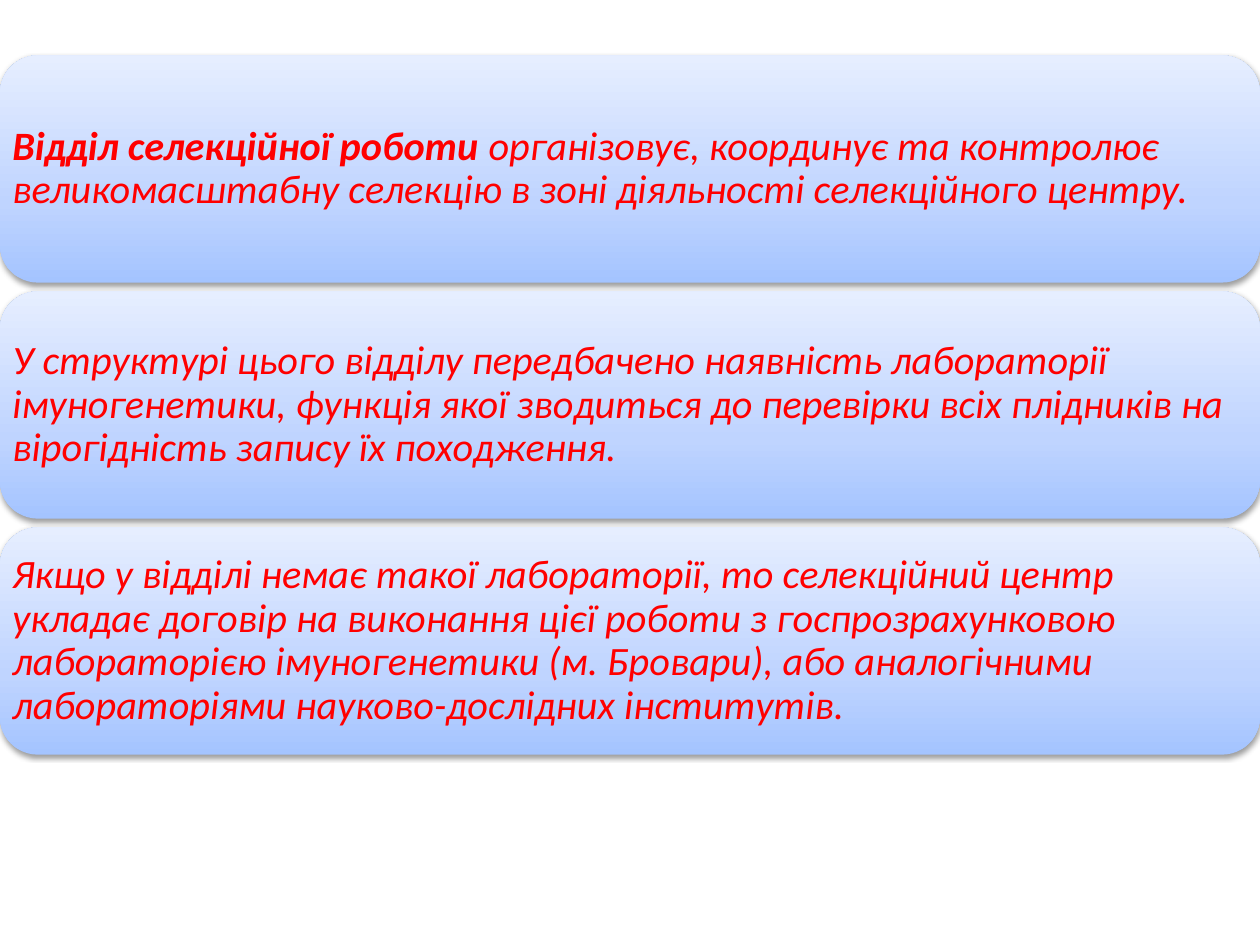
from copy import deepcopy
from dataclasses import dataclass

from pptx import Presentation
from pptx.dml.color import RGBColor
from pptx.enum.shapes import MSO_SHAPE
from pptx.enum.text import MSO_ANCHOR, PP_ALIGN
from pptx.oxml import parse_xml
from pptx.oxml.ns import nsdecls, qn
from pptx.util import Inches, Pt

ROUNDED = MSO_SHAPE.ROUNDED_RECTANGLE
MIDDLE = MSO_ANCHOR.MIDDLE
LEFT = PP_ALIGN.LEFT


@dataclass(frozen=True)
class Theme:
    """Colours and type of the slide."""
    font: str = "Calibri"
    size: int = 23
    text: str = "FF0000"
    gradient: tuple = ((0, "A4C4FF"), (0.35, "BFD4FF"), (1, "E6EEFF"))
    shadow: str = "000000"


THEME = Theme()

STATEMENTS = [
    [("Відділ селекційної роботи ", True),
     ("організовує, координує та контролює великомасштабну селекцію "
      "в зоні діяльності селекційного центру.", False)],
    [("У структурі цього відділу передбачено наявність лабораторії "
      "імуногенетики, функція якої зводиться до перевірки всіх плідників "
      "на вірогідність запису їх походження.", False)],
    [("Якщо у відділі немає такої лабораторії, то селекційний центр укладає "
      "договір на виконання цієї роботи з госпрозрахунковою лабораторією "
      "імуногенетики (м. Бровари), або аналогічними лабораторіями "
      "науково-дослідних інститутів.", False)],
]


def fill_gradient(shape):
    """Fill a shape with the theme gradient, darkest at the bottom."""
    shape.fill.gradient()
    shape.fill.gradient_angle = 90
    stop_list = shape._element.spPr.find(".//" + qn("a:gsLst"))
    stop_list.append(deepcopy(stop_list[-1]))
    for stop, (position, colour) in zip(shape.fill.gradient_stops, THEME.gradient):
        stop.position = position
        stop.color.rgb = RGBColor.from_string(colour)


def add_soft_shadow(shape):
    """Give a shape a blurred shadow that falls straight down."""
    shape.shadow.inherit = False
    effects = shape._element.spPr.find(qn("a:effectLst"))
    effects.append(parse_xml(
        f'<a:outerShdw {nsdecls("a")} blurRad="{Pt(3.1)}" dist="{Pt(1.6)}" '
        f'dir="5400000" rotWithShape="0"><a:srgbClr val="{THEME.shadow}">'
        f'<a:alpha val="38000"/></a:srgbClr></a:outerShdw>'))


def add_statement(shapes, spans, left, top, width, height):
    """Place one rounded panel and its text in the given box."""
    panel = shapes.add_shape(ROUNDED, left, top, width, height)
    panel.line.fill.background()
    fill_gradient(panel)
    add_soft_shadow(panel)

    box = shapes.add_textbox(left, top, width, height)
    frame = box.text_frame
    frame.word_wrap = True
    frame.vertical_anchor = MIDDLE
    frame.margin_left = frame.margin_right = Inches(0.1)
    frame.margin_top = frame.margin_bottom = Inches(0.1)
    para = frame.paragraphs[0]
    para.alignment = LEFT
    para.line_spacing = 0.9
    para.space_after = Pt(8)
    for text, bold in spans:
        span = para.add_run()
        span.text = text
        span.font.name = THEME.font
        span.font.size = Pt(THEME.size)
        span.font.bold = bold
        span.font.italic = True
        span.font.color.rgb = RGBColor.from_string(THEME.text)


def add_statement_list(page, left, top, width, height, gap):
    """Stack the statements evenly in the given box."""
    group = page.shapes.add_group_shape()
    count = len(STATEMENTS)
    panel_height = (height - gap * (count - 1)) // count
    for index, spans in enumerate(STATEMENTS):
        panel_top = top + index * (panel_height + gap)
        add_statement(group.shapes, spans, left, panel_top, width, panel_height)


def main():
    """Build and save the deck."""
    deck = Presentation()
    deck.slide_width = Inches(10)
    deck.slide_height = Inches(7.5)
    page = deck.slides.add_slide(deck.slide_layouts[6])
    add_statement_list(page, Inches(0), Inches(0.44), deck.slide_width,
                       Inches(5.55), Inches(0.07))
    deck.save("out.pptx")


if __name__ == "__main__":
    main()
